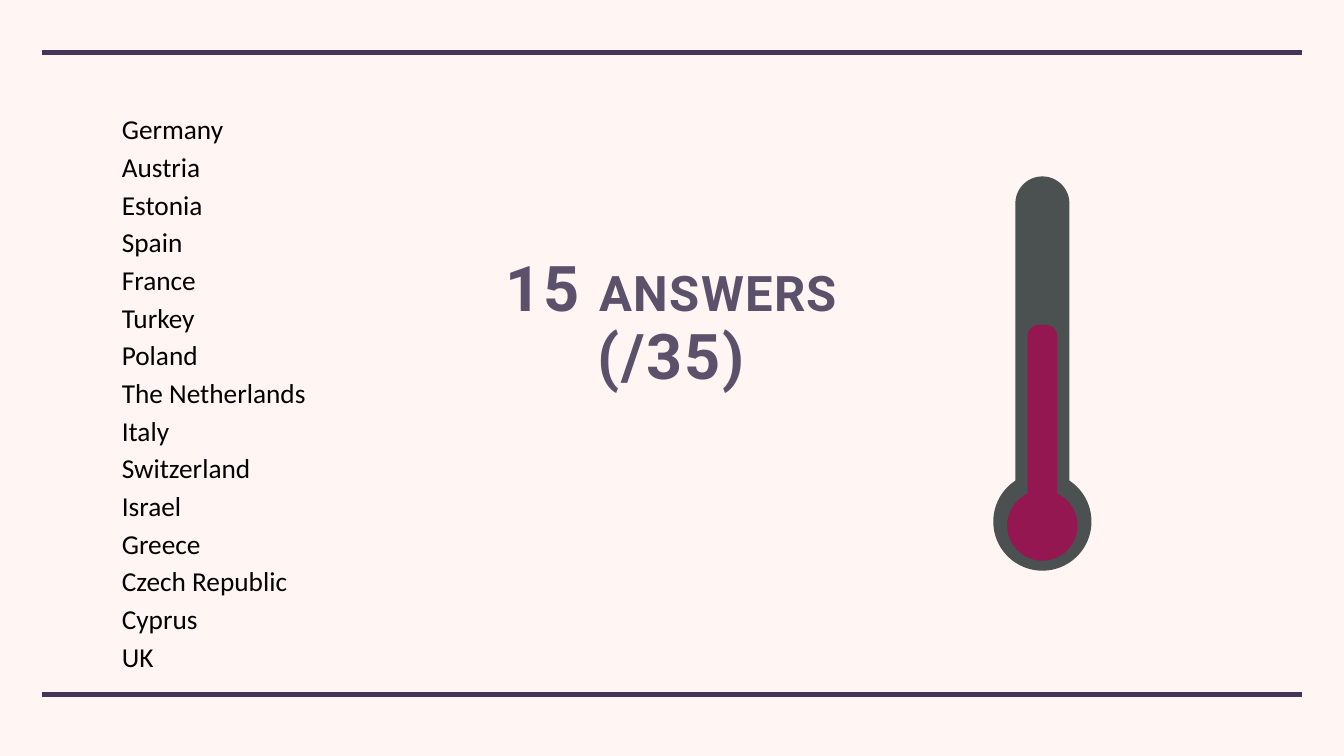
from lxml import etree
from pptx import Presentation
from pptx.dml.color import RGBColor
from pptx.enum.shapes import MSO_CONNECTOR, MSO_SHAPE
from pptx.enum.text import MSO_ANCHOR, MSO_AUTO_SIZE, PP_ALIGN
from pptx.oxml.ns import qn
from pptx.util import Pt

EMU_PER_PX = 9525
SLIDE_WIDTH, SLIDE_HEIGHT = 2560, 1440
STRAIGHT = MSO_CONNECTOR.STRAIGHT
OVAL, ROUNDED = MSO_SHAPE.OVAL, MSO_SHAPE.ROUNDED_RECTANGLE
MIDDLE, BOTTOM = MSO_ANCHOR.MIDDLE, MSO_ANCHOR.BOTTOM
LEFT, CENTER = PP_ALIGN.LEFT, PP_ALIGN.CENTER
NO_AUTOFIT = MSO_AUTO_SIZE.NONE

COLORS = {
    "background": "FFF5F2",
    "rule": "443658",
    "title": "5B516A",
    "glass": "4B5050",
    "mercury": "941751",
    "text": "000000",
}
COUNTRIES = [
    "Germany", "Austria", "Estonia", "Spain", "France", "Turkey", "Poland",
    "The Netherlands", "Italy", "Switzerland", "Israel", "Greece",
    "Czech Republic", "Cyprus", "UK",
]
TITLE_LINES = [[("15 ", 90), ("ANSWERS", 70)], [("(/35)", 90)]]


def px(value):
    return int(value * EMU_PER_PX)


def color(name):
    return RGBColor.from_string(COLORS[name])


def set_attributes(target, values):
    for name, value in values.items():
        setattr(target, name, value)


def place_text(placeholder, box, anchor):
    """Move a placeholder to the box and reset its frame."""
    left, top, width, height = map(px, box)
    set_attributes(placeholder, {
        "left": left, "top": top, "width": width, "height": height})
    frame = placeholder.text_frame
    set_attributes(frame, {
        "word_wrap": True, "auto_size": NO_AUTOFIT, "vertical_anchor": anchor,
        "margin_left": px(6), "margin_right": px(6),
        "margin_top": px(6), "margin_bottom": px(6)})
    return frame


def add_paragraph(frame, index, values):
    paragraph = frame.add_paragraph() if index else frame.paragraphs[0]
    set_attributes(paragraph, {"space_before": Pt(0), **values})
    return paragraph


def add_run(paragraph, text, color_name, values):
    run = paragraph.add_run()
    run.text = text
    set_attributes(run.font, values)
    run.font.color.rgb = color(color_name)
    return run


def add_rules(slide, box):
    """Draw a line along the top and the bottom of the box."""
    left, top, width, height = box
    for y in (top, top + height):
        rule = slide.shapes.add_connector(
            STRAIGHT, px(left), px(y), px(left + width), px(y))
        rule.line.color.rgb = color("rule")
        rule.line.width = Pt(6)
        etree.SubElement(rule._element.spPr, qn("a:effectLst"))


def fill_title(slide, box):
    frame = place_text(slide.shapes.title, box, BOTTOM)
    for index, parts in enumerate(TITLE_LINES):
        paragraph = add_paragraph(
            frame, index, {"alignment": CENTER, "line_spacing": 0.9})
        for text, size in parts:
            run = add_run(paragraph, text, "title", {
                "name": "Roboto", "size": Pt(size), "bold": True})
            run.font._element.set("spc", str(size * 3))


def fill_countries(slide, box):
    frame = place_text(slide.placeholders[1], box, MIDDLE)
    for index, country in enumerate(COUNTRIES):
        paragraph = add_paragraph(
            frame, index, {"alignment": LEFT, "line_spacing": 1.15})
        properties = paragraph._p.get_or_add_pPr()
        properties.set("marL", "0")
        properties.set("indent", "0")
        etree.SubElement(properties, qn("a:buNone"))
        add_run(paragraph, country, "text", {"name": "Calibri", "size": Pt(39)})


def add_thermometer(slide, box):
    """Stack the parts on the vertical axis of the box."""
    left, top, width, height = box
    glass = slide.shapes.add_group_shape().shapes
    # container, preset, top, width, height, colour, corner
    parts = [
        (glass, OVAL, height - width, width, width, "glass", None),
        (glass, ROUNDED, 0, 103, 663, "glass", 0.5),
        (slide.shapes, OVAL, 598, 134, 134, "mercury", None),
        (slide.shapes, ROUNDED, 283, 56, 342, "mercury", 0.37),
    ]
    for shapes, preset, offset, part_width, part_height, fill, corner in parts:
        shape = shapes.add_shape(
            preset, px(left + (width - part_width) / 2), px(top + offset),
            px(part_width), px(part_height))
        shape.shadow.inherit = False
        shape.fill.solid()
        shape.fill.fore_color.rgb = color(fill)
        shape.line.fill.background()
        if corner is not None:
            shape.adjustments[0] = corner


def main():
    presentation = Presentation()
    presentation.slide_width = px(SLIDE_WIDTH)
    presentation.slide_height = px(SLIDE_HEIGHT)
    slide = presentation.slides.add_slide(presentation.slide_layouts[1])
    slide.background.fill.solid()
    slide.background.fill.fore_color.rgb = color("background")
    add_rules(slide, (80, 100, 2400, 1223))
    fill_title(slide, (747, 412, 1064, 342))
    add_thermometer(slide, (1892, 336, 187, 751))
    fill_countries(slide, (226, 202, 374, 1082))
    presentation.save("out.pptx")


if __name__ == "__main__":
    main()
